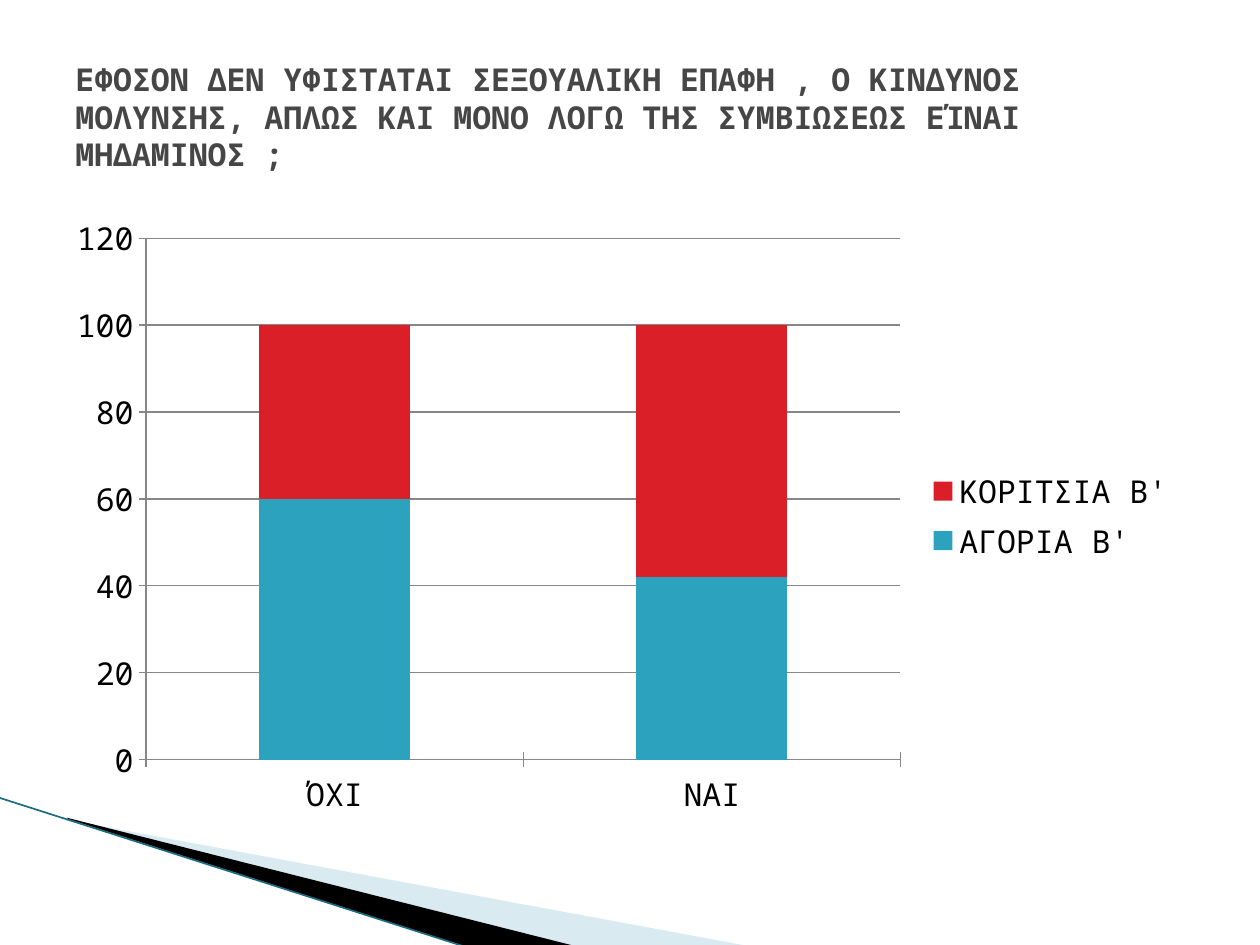
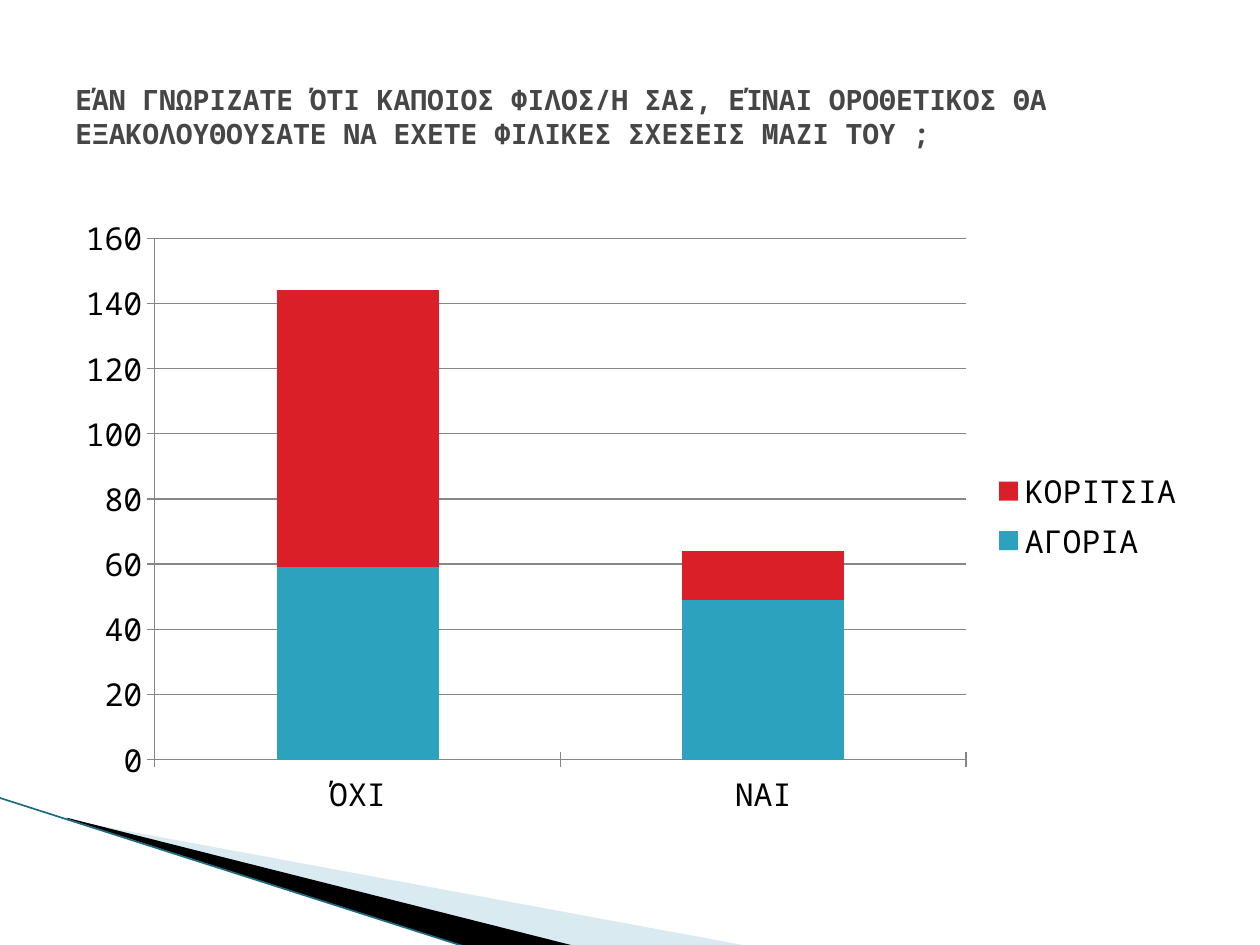
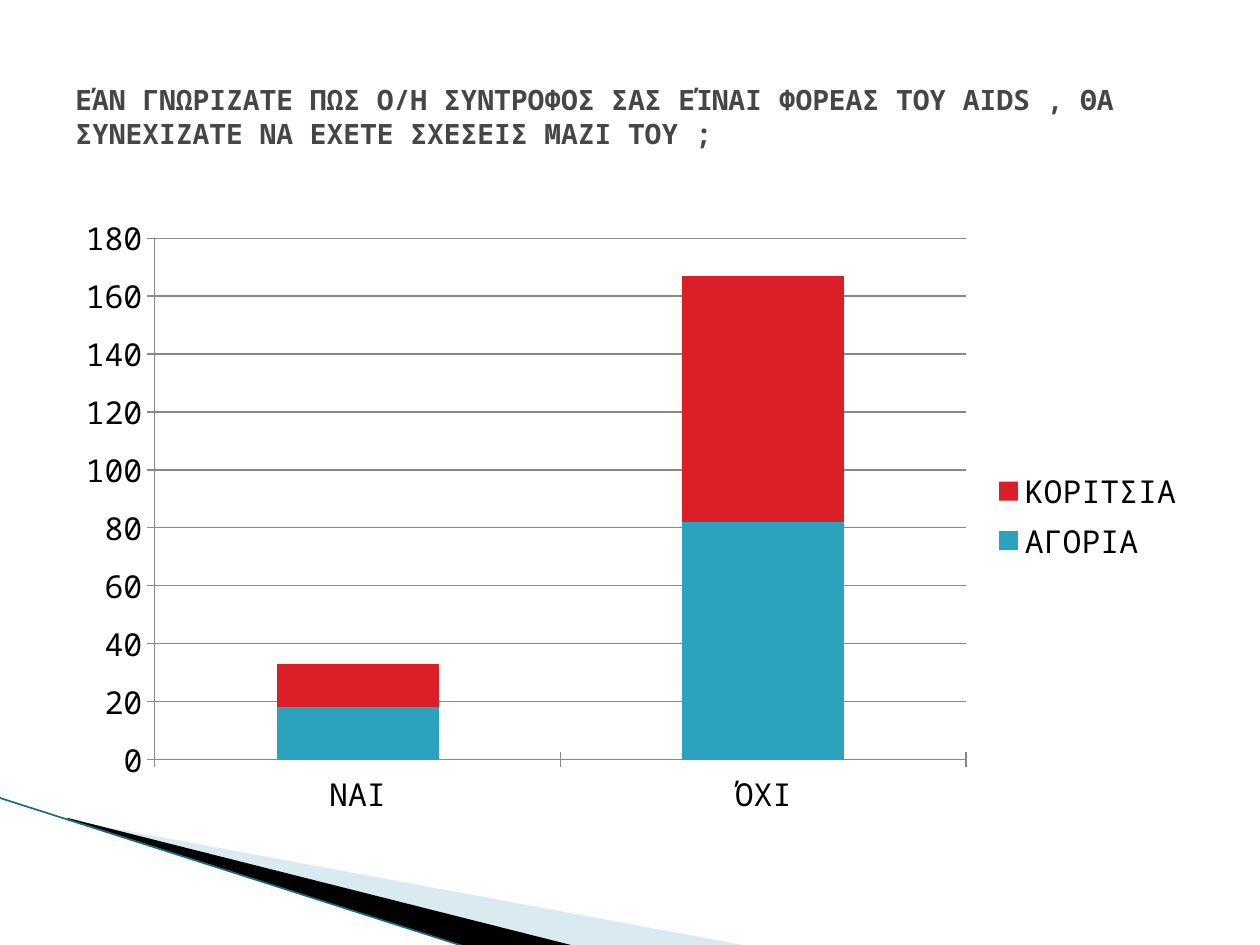
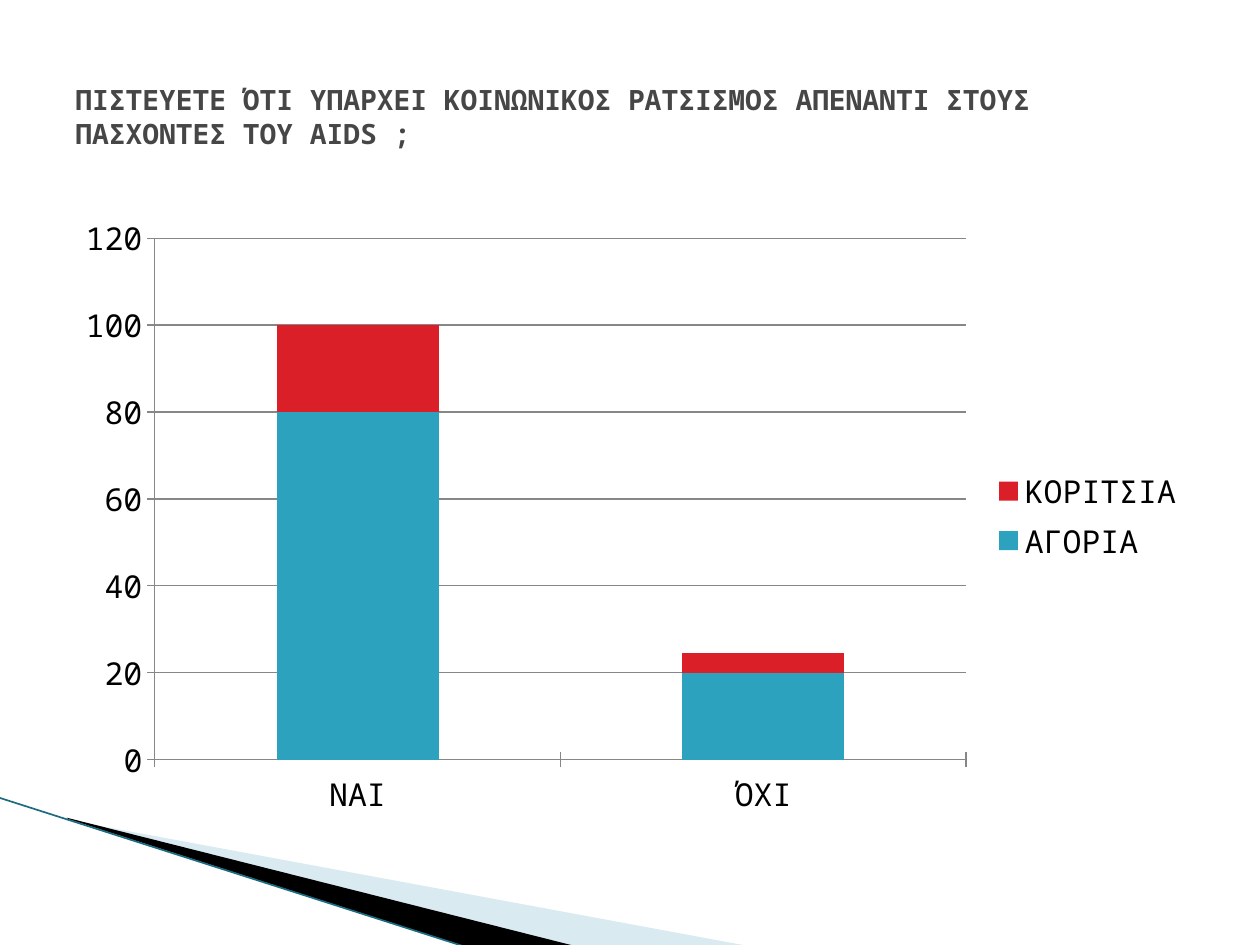
from lxml.etree import SubElement
from pptx import Presentation
from pptx.chart.data import CategoryChartData
from pptx.dml.color import RGBColor
from pptx.enum.chart import XL_CHART_TYPE, XL_LEGEND_POSITION, XL_TICK_MARK
from pptx.enum.shapes import MSO_CONNECTOR
from pptx.enum.text import MSO_ANCHOR
from pptx.oxml.ns import qn
from pptx.util import Inches, Pt

HUES = {
    "title": "464646", "text": "000000", "axis": "878787",
    "boys": "2DA2BF", "girls": "DA1F28",
    "pale": "A0CBDC", "dark": "000000", "edge": "1B6C80",
}
FONT = "Noto Sans Mono"
TITLE = (0.5, 0.3, 9, 1.25)
PLOT = (0.5, 1.62, 9, 4.95)
BAND = (0, 6.33, 5.95, 1.18)

# Title, title size, chart left, categories, series
DATA = [
    ("ΕΦΟΣΟΝ ΔΕΝ ΥΦΙΣΤΑΤΑΙ ΣΕΞΟΥΑΛΙΚΗ ΕΠΑΦΗ , Ο ΚΙΝΔΥΝΟΣ ΜΟΛΥΝΣΗΣ, "
     "ΑΠΛΩΣ ΚΑΙ ΜΟΝΟ ΛΟΓΩ ΤΗΣ ΣΥΜΒΙΩΣΕΩΣ ΕΊΝΑΙ ΜΗΔΑΜΙΝΟΣ ;",
     18, 0.43, ("ΌΧΙ", "ΝΑΙ"),
     {"ΑΓΟΡΙΑ Β'": (60, 42), "ΚΟΡΙΤΣΙΑ Β'": (40, 58)}),
    ("ΕΆΝ ΓΝΩΡΙΖΑΤΕ ΌΤΙ ΚΑΠΟΙΟΣ ΦΙΛΟΣ/Η ΣΑΣ, ΕΊΝΑΙ ΟΡΟΘΕΤΙΚΟΣ ΘΑ "
     "ΕΞΑΚΟΛΟΥΘΟΥΣΑΤΕ ΝΑ ΕΧΕΤΕ ΦΙΛΙΚΕΣ ΣΧΕΣΕΙΣ ΜΑΖΙ ΤΟΥ ;",
     16, 0.5, ("ΌΧΙ", "ΝΑΙ"),
     {"ΑΓΟΡΙΑ": (59, 49), "ΚΟΡΙΤΣΙΑ": (85, 15)}),
    ("ΕΆΝ ΓΝΩΡΙΖΑΤΕ ΠΩΣ Ο/Η ΣΥΝΤΡΟΦΟΣ ΣΑΣ ΕΊΝΑΙ ΦΟΡΕΑΣ ΤΟΥ AIDS , ΘΑ "
     "ΣΥΝΕΧΙΖΑΤΕ ΝΑ ΕΧΕΤΕ ΣΧΕΣΕΙΣ ΜΑΖΙ ΤΟΥ ;",
     16, 0.5, ("ΝΑΙ", "ΌΧΙ"),
     {"ΑΓΟΡΙΑ": (18, 82), "ΚΟΡΙΤΣΙΑ": (15, 85)}),
    ("ΠΙΣΤΕΥΕΤΕ ΌΤΙ ΥΠΑΡΧΕΙ ΚΟΙΝΩΝΙΚΟΣ ΡΑΤΣΙΣΜΟΣ ΑΠΕΝΑΝΤΙ ΣΤΟΥΣ "
     "ΠΑΣΧΟΝΤΕΣ ΤΟΥ AIDS ;",
     16, 0.5, ("ΝΑΙ", "ΌΧΙ"),
     {"ΑΓΟΡΙΑ": (80, 20), "ΚΟΡΙΤΣΙΑ": (20, 4.5)}),
]


def style(item, **values):
    for name, value in values.items():
        setattr(item, name, value)


def hue(name):
    return RGBColor.from_string(HUES[name])


def paint(fill, name):
    fill.solid()
    fill.fore_color.rgb = hue(name)


def write(font, size, name, bold=False):
    style(font, name=FONT, size=Pt(size), bold=bold)
    font.color.rgb = hue(name)


def wedge(slide, box, points, name, alpha=None):
    spots = [(Inches(box[0] + x), Inches(box[1] + y)) for x, y in points]
    pen = slide.shapes.build_freeform(*spots[0])
    pen.add_line_segments(spots[1:], close=True)
    shape = pen.convert_to_shape()
    shape.shadow.inherit = False
    paint(shape.fill, name)
    shape.line.fill.background()
    if alpha:
        tint = shape.fill._xPr.find(".//" + qn("a:srgbClr"))
        SubElement(tint, qn("a:alpha")).set("val", str(alpha * 1000))


def add_band(slide, box):
    # Two wedges that fan out from the left
    wedge(slide, box, [(0.55, 0.18), (5.95, 1.18), (4.56, 1.18), (0.55, 0.17)],
          "pale", 40)
    wedge(slide, box, [(0.53, 0.16), (4.57, 1.18), (3.72, 1.19), (0.54, 0.17)],
          "dark")
    # Thin lower edge
    left, top = box[:2]
    edge = slide.shapes.add_connector(
        MSO_CONNECTOR.STRAIGHT, Inches(left - 0.01), Inches(top),
        Inches(left + 3.71), Inches(top + 1.19))
    edge.line.color.rgb = hue("edge")
    edge.line.width = Pt(0.95)
    SubElement(edge._element.spPr, qn("a:effectLst"))


def add_title(slide, box, text, size):
    frame = slide.shapes.add_textbox(*map(Inches, box)).text_frame
    style(frame, word_wrap=True, vertical_anchor=MSO_ANCHOR.MIDDLE)
    para = frame.paragraphs[0]
    para.line_spacing = Pt(size * 1.2)
    run = para.add_run()
    run.text = text
    write(run.font, size, "title", True)


def add_plot(slide, box, cats, rows):
    data = CategoryChartData()
    data.categories = cats
    for name, vals in rows.items():
        data.add_series(name, vals)
    chart = slide.shapes.add_chart(
        XL_CHART_TYPE.COLUMN_STACKED, *map(Inches, box), data).chart
    style(chart, has_title=False, has_legend=True)
    style(chart.legend, position=XL_LEGEND_POSITION.RIGHT,
          include_in_layout=False)
    write(chart.font, 18, "text")

    # Bars
    plot = chart.plots[0]
    style(plot, gap_width=150, overlap=100, vary_by_categories=False)
    for row, name in zip(plot.series, ("boys", "girls")):
        paint(row.format.fill, name)

    # Axes and grid
    grid = chart.value_axis.major_gridlines
    for axis in (chart.category_axis, chart.value_axis):
        axis.major_tick_mark = XL_TICK_MARK.CROSS
    for part in (chart.category_axis, chart.value_axis, grid):
        part.format.line.color.rgb = hue("axis")
        part.format.line.width = Pt(0.75)


def add_page(deck, title, size, left, cats, rows):
    slide = deck.slides.add_slide(deck.slide_layouts[6])
    add_band(slide, BAND)
    add_plot(slide, (left, *PLOT[1:]), cats, rows)
    add_title(slide, TITLE, title, size)


def main():
    deck = Presentation()
    style(deck, slide_width=Inches(10), slide_height=Inches(7.5))
    for page in DATA:
        add_page(deck, *page)
    deck.save("out.pptx")


if __name__ == "__main__":
    main()
